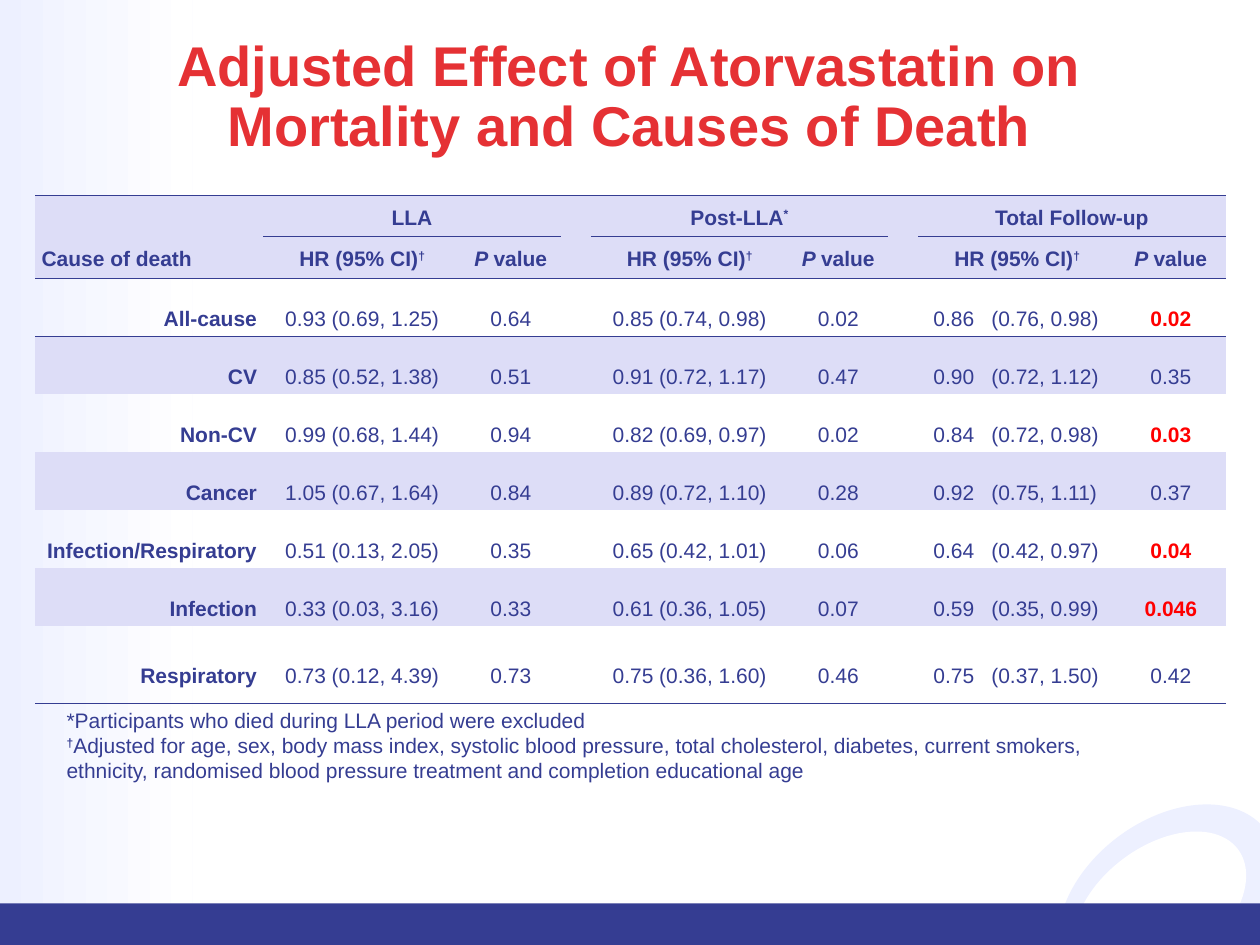
from pptx import Presentation
from pptx import util as u
from pptx.dml.color import RGBColor
from pptx.enum import shapes, text
from pptx.oxml import ns, xmlchemy

NAVY = RGBColor(0x35, 0x3D, 0x92)
RED = RGBColor(0xE5, 0x31, 0x34)
BRIGHT_RED = RGBColor(0xFF, 0x00, 0x00)
LAVENDER = RGBColor(0xDD, 0xDD, 0xF7)
PALE = RGBColor(0xED, 0xF0, 0xFF)
WHITE = RGBColor(0xFF, 0xFF, 0xFF)
ALIGN = text.PP_ALIGN
NO_STYLE = "{2D5ABB26-0587-4C30-8999-92F81FD0307C}"

COLUMNS = [1.81, 1.57, 0.79, 0.24, 1.57, 0.79, 0.24, 1.57, 0.87]
ROWS = [0.33] * 2 + [0.46] * 6 + [0.61]
GROUP_STARTS = (1, 4, 7)
GROUPS = [
    [("LLA", {})],
    [("Post-LLA", {}), ("*", {"raised": True})],
    [("Total Follow-up", {})],
]
RATIO_HEAD = [("HR (95% CI)", {}), ("†", {"raised": True})]
P_HEAD = [("P ", {"italic": True}), ("value", {})]
RESULTS = [
    ("All-cause", "0.93 (0.69, 1.25)", "0.64", "0.85 (0.74, 0.98)", "0.02", "0.86\t(0.76, 0.98)", "0.02"),
    ("CV", "0.85 (0.52, 1.38)", "0.51", "0.91 (0.72, 1.17)", "0.47", "0.90\t(0.72, 1.12)", "0.35"),
    ("Non-CV", "0.99 (0.68, 1.44)", "0.94", "0.82 (0.69, 0.97)", "0.02", "0.84\t(0.72, 0.98)", "0.03"),
    ("Cancer", "1.05 (0.67, 1.64)", "0.84", "0.89 (0.72, 1.10)", "0.28", "0.92\t(0.75, 1.11)", "0.37"),
    ("Infection/Respiratory", "0.51 (0.13, 2.05)", "0.35", "0.65 (0.42, 1.01)", "0.06", "0.64\t(0.42, 0.97)", "0.04"),
    ("Infection", "0.33 (0.03, 3.16)", "0.33", "0.61 (0.36, 1.05)", "0.07", "0.59\t(0.35, 0.99)", "0.046"),
    ("Respiratory", "0.73 (0.12, 4.39)", "0.73", "0.75 (0.36, 1.60)", "0.46", "0.75\t(0.37, 1.50)", "0.42"),
]
RESULT_COLUMNS = (0, 1, 2, 4, 5, 7, 8)


def set_all(target, values):
    """Set each named attribute of the target."""
    for name, value in values.items():
        setattr(target, name, value)


def add_spans(para, spans, color=NAVY, size=12, bold=False):
    """Append formatted spans to a paragraph."""
    for words, changes in spans:
        span = para.add_run()
        span.text = words
        font = {"name": "Arial", "size": u.Pt(size), "bold": bold, **changes}
        raised = font.pop("raised", False)
        set_all(span.font, font)
        span.font.color.rgb = color
        if raised:
            span.font.element.set("baseline", "30000") if hasattr(span.font, "element") else \
                span._r.get_or_add_rPr().set("baseline", "30000")


def add_block(page, kind, box, color, rotation=0):
    """Add a plain filled shape without outline."""
    block = page.shapes.add_shape(kind, *map(u.Inches, box))
    block.shadow.inherit = False
    block.rotation = rotation
    block.line.fill.background()
    block.fill.solid()
    block.fill.fore_color.rgb = color
    return block


def add_backdrop(page, width, height):
    """Draw the corner ring, the left fade and the bottom band."""
    kinds = shapes.MSO_SHAPE
    add_block(page, kinds.OVAL, (width - 1.7, height - 0.99, 1.94, 1.32), PALE, 323.2)
    add_block(page, kinds.OVAL, (width - 1.57, height - 0.78, 1.55, 0.97), WHITE, 323.2)
    fade = add_block(page, kinds.RECTANGLE, (0, 0, 1.53, height - 0.28), PALE)
    fade.fill.gradient()
    fade.fill.gradient_angle = 0
    for stop, color in zip(fade.fill.gradient_stops, (PALE, WHITE)):
        stop.color.rgb = color
    add_block(page, kinds.RECTANGLE, (0, height - 0.33, width, 0.33), NAVY)


def add_title(page, box):
    """Place the centred slide title."""
    frame = page.shapes.add_textbox(*map(u.Inches, box)).text_frame
    set_all(frame, {"word_wrap": True, "margin_left": 0, "margin_right": 0,
                    "margin_top": 0, "margin_bottom": 0})
    para = frame.paragraphs[0]
    set_all(para, {"alignment": ALIGN.CENTER, "line_spacing": 0.9})
    title = "Adjusted Effect of Atorvastatin on Mortality and Causes of Death"
    add_spans(para, [(title, {})], RED, 32, True)


def style_cell(cell, edges, shaded):
    """Set margins, ruled edges and fill of a cell."""
    set_all(cell, {"margin_left": u.Inches(0.05), "margin_right": u.Inches(0.05),
                   "margin_top": 0, "margin_bottom": 0,
                   "vertical_anchor": text.MSO_ANCHOR.MIDDLE})
    properties = cell._tc.get_or_add_tcPr()
    for edge in edges:
        line = xmlchemy.OxmlElement(f"a:ln{edge}")
        line.set("w", str(u.Pt(0.5)))
        fill = xmlchemy.OxmlElement("a:solidFill")
        color = xmlchemy.OxmlElement("a:srgbClr")
        color.set("val", str(NAVY))
        fill.append(color)
        line.append(fill)
        properties.append(line)
    if shaded:
        cell.fill.solid()
        cell.fill.fore_color.rgb = LAVENDER
    else:
        cell.fill.background()


def cell_edges(row, column):
    """Return the ruled edges of a cell, top before bottom."""
    in_group = column not in (0, 3, 6)
    top = row in (0, 2) or (row == 1 and in_group)
    bottom = row in (1, len(ROWS) - 1) or (row == 0 and in_group)
    return "T" * top + "B" * bottom


def write_cell(cell, spans, alignment, spacing, color=NAVY, bold=False):
    """Write one paragraph into a cell."""
    para = cell.text_frame.paragraphs[0]
    set_all(para, {"alignment": alignment, "line_spacing": spacing})
    add_spans(para, spans, color, 12, bold)


def add_tab(cell, position):
    """Give the first paragraph of a cell one left tab stop."""
    stops = xmlchemy.OxmlElement("a:tabLst")
    stop = xmlchemy.OxmlElement("a:tab")
    stop.set("pos", str(u.Inches(position)))
    stop.set("algn", "l")
    stops.append(stop)
    cell.text_frame.paragraphs[0]._p.get_or_add_pPr().append(stops)


def add_results(page, left, top):
    """Build the hazard ratio table."""
    box = (left, top, sum(COLUMNS), sum(ROWS))
    holder = page.shapes.add_table(len(ROWS), len(COLUMNS), *map(u.Inches, box))
    table = holder.table
    set_all(table, {"first_row": False, "horz_banding": False})
    for style in holder.element.iter(ns.qn("a:tableStyleId")):
        style.text = NO_STYLE
    for column, width in zip(table.columns, COLUMNS):
        column.width = u.Inches(width)
    for index, height in enumerate(ROWS):
        table.rows[index].height = u.Inches(height)
        for column in range(len(COLUMNS)):
            shaded = index < 2 or index % 2 == 1 and index < len(ROWS) - 1
            style_cell(table.cell(index, column), cell_edges(index, column), shaded)

    write_cell(table.cell(1, 0), [("Cause of death", {})], ALIGN.LEFT, 1.15, bold=True)
    for start, group in zip(GROUP_STARTS, GROUPS):
        table.cell(0, start).merge(table.cell(0, start + 1))
        for row, column, spans in ((0, start, group), (1, start, RATIO_HEAD), (1, start + 1, P_HEAD)):
            write_cell(table.cell(row, column), spans, ALIGN.CENTER, 1.15, bold=True)

    for row, values in enumerate(RESULTS, 2):
        for column, value in zip(RESULT_COLUMNS, values):
            cell = table.cell(row, column)
            significant = column == 8 and float(value) < 0.05
            alignment = {0: ALIGN.RIGHT, 7: ALIGN.LEFT}.get(column, ALIGN.CENTER)
            write_cell(cell, [(value, {})], alignment, 2.0,
                       BRIGHT_RED if significant else NAVY, significant or column == 0)
            if column == 7:
                cell.margin_left = u.Inches(0.12)
                add_tab(cell, 0.46)


def add_footnotes(page, box):
    """Place the two notes under the table."""
    frame = page.shapes.add_textbox(*map(u.Inches, box)).text_frame
    set_all(frame, {"word_wrap": True, "vertical_anchor": text.MSO_ANCHOR.MIDDLE})
    add_spans(frame.paragraphs[0], [("*Participants who died during LLA period were excluded", {})])
    add_spans(frame.add_paragraph(), [
        ("†", {"bold": True, "raised": True}),
        ("Adjusted for age, sex, body mass index, systolic blood pressure, total cholesterol, "
         "diabetes, current smokers, ethnicity, randomised blood pressure treatment and "
         "completion educational age", {}),
    ])


def main():
    """Build and save the deck."""
    deck = Presentation()
    set_all(deck, {"slide_width": u.Inches(10), "slide_height": u.Inches(7.5)})
    page = deck.slides.add_slide(deck.slide_layouts[6])
    add_backdrop(page, 10, 7.5)
    add_title(page, (0.84, 0.3, 8.31, 0.46))
    add_results(page, 0.28, 1.55)
    add_footnotes(page, (0.43, 5.56, 8.62, 0.71))
    deck.save("out.pptx")


if __name__ == "__main__":
    main()
